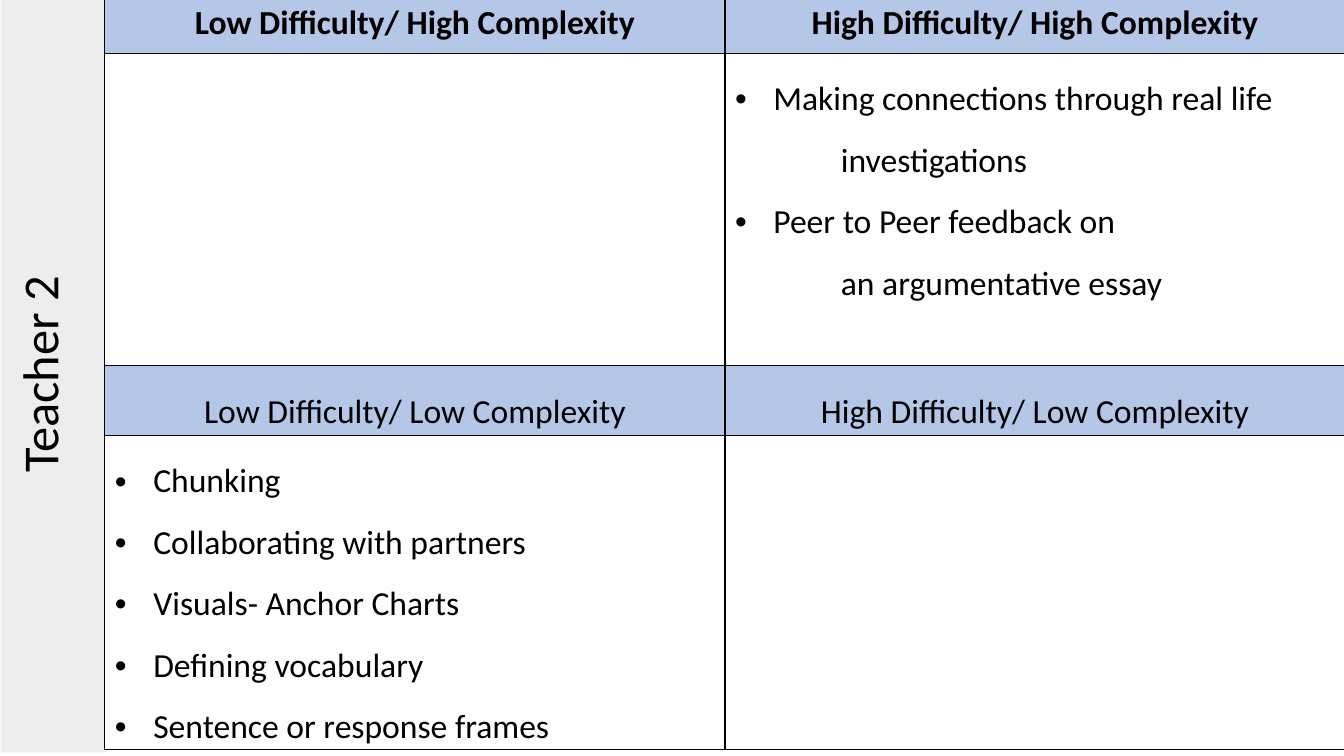
from pptx import Presentation
from pptx.dml.color import RGBColor
from pptx.enum.text import MSO_ANCHOR, MSO_AUTO_SIZE, PP_ALIGN
from pptx.oxml import parse_xml
from pptx.oxml.ns import nsdecls
from pptx.util import Inches, Pt

CENTER, LEFT = PP_ALIGN.CENTER, PP_ALIGN.LEFT
MIDDLE = MSO_ANCHOR.MIDDLE
NO_AUTOFIT = MSO_AUTO_SIZE.NONE

BLACK = RGBColor(0x00, 0x00, 0x00)
WHITE = RGBColor(0xFF, 0xFF, 0xFF)
GRAY = RGBColor(0xED, 0xED, 0xED)
BLUE = RGBColor(0xB4, 0xC7, 0xE7)

TITLE_ONLY = 5
COL_WIDTH = 6.15
ROW_HEIGHTS = (0.55, 3.1, 0.69, 3.11)
HANGING, CONTINUED = 0.38, 1.05

# Each list entry is (text, whether it starts with a bullet).
CONNECTIONS = [
    ("Making connections through real life", True),
    ("investigations", False),
    ("Peer to Peer feedback on", True),
    ("an argumentative essay", False),
]
SUPPORTS = [(text, True) for text in (
    "Chunking",
    "Collaborating with partners",
    "Visuals- Anchor Charts",
    "Defining vocabulary",
    "Sentence or response frames",
)]


class MatrixSlide:
    font = "Calibri"
    size = 24

    def __init__(self, prs):
        self.slide = prs.slides.add_slide(prs.slide_layouts[TITLE_ONLY])

    def format_runs(self, p, size, bold=False):
        for r in p.runs:
            r.font.name = self.font
            r.font.size = Pt(size)
            r.font.bold = bold
            r.font.color.rgb = BLACK

    def side_title(self, text, left, top, width, height):
        sp = self.slide.shapes.title
        sp.left, sp.top = Inches(left), Inches(top)
        sp.width, sp.height = Inches(width), Inches(height)
        sp.rotation = 270
        sp.fill.solid()
        sp.fill.fore_color.rgb = GRAY
        tf = sp.text_frame
        tf.text = text
        tf.auto_size = NO_AUTOFIT
        tf.vertical_anchor = MIDDLE
        tf.margin_bottom = Inches(0.35)
        p = tf.paragraphs[0]
        p.alignment = CENTER
        p.line_spacing = 1.0
        self.format_runs(p, 36)

    def table(self, left, top):
        rows = len(ROW_HEIGHTS)
        frame = self.slide.shapes.add_table(
            rows, 2, Inches(left), Inches(top),
            Inches(2 * COL_WIDTH), Inches(sum(ROW_HEIGHTS)))
        table = frame.table
        table.first_row = table.horz_banding = False
        for col in table.columns:
            col.width = Inches(COL_WIDTH)
        for i, (row, height) in enumerate(zip(table.rows, ROW_HEIGHTS)):
            row.height = Inches(height)
            for cell in row.cells:
                self.style_cell(cell, WHITE if i % 2 else BLUE)
        return table

    def style_cell(self, cell, color):
        cell.fill.solid()
        cell.fill.fore_color.rgb = color
        cell.margin_top, cell.margin_bottom = Inches(0.05), Inches(0.02)
        tcPr = cell._tc.get_or_add_tcPr()
        for i, side in enumerate("LRTB"):
            tcPr.insert(i, parse_xml(
                f'<a:ln{side} {nsdecls("a")} w="{Pt(1)}"><a:solidFill>'
                f'<a:srgbClr val="{BLACK}"/></a:solidFill></a:ln{side}>'))

    def heading(self, cell, text, bold, spacing):
        cell.text_frame.text = text
        p = cell.text_frame.paragraphs[0]
        p.alignment = CENTER
        p.line_spacing = spacing
        self.format_runs(p, self.size, bold)

    def bullet_list(self, cell, items):
        tf = cell.text_frame
        tf.text = "\n".join(text for text, _ in items)
        for p, (_, bulleted) in zip(tf.paragraphs, items):
            p.alignment = LEFT
            p.line_spacing = 1.5
            self.format_runs(p, self.size)
            pPr = p._p.get_or_add_pPr()
            pPr.set("marL", str(Inches(HANGING if bulleted else CONTINUED)))
            if bulleted:
                pPr.set("indent", str(-Inches(HANGING)))
                pPr.append(parse_xml(
                    f'<a:buFont {nsdecls("a")} typeface="Arial"/>'))
                pPr.append(parse_xml(f'<a:buChar {nsdecls("a")} char="•"/>'))


def main():
    prs = Presentation()
    prs.slide_width, prs.slide_height = Inches(13.33), Inches(7.5)
    s = MatrixSlide(prs)
    s.side_title("Teacher 2", -3.22, 3.19, 7.5, 1.05)
    table = s.table(1.04, -0.02)
    for row, complexity, bold, spacing in ((0, "High", True, 1.0),
                                           (2, "Low", False, 1.5)):
        for col, difficulty in enumerate(("Low", "High")):
            s.heading(table.cell(row, col),
                      f"{difficulty} Difficulty/ {complexity} Complexity",
                      bold, spacing)
    s.bullet_list(table.cell(1, 1), CONNECTIONS)
    s.bullet_list(table.cell(3, 0), SUPPORTS)
    prs.save("out.pptx")


if __name__ == "__main__":
    main()
